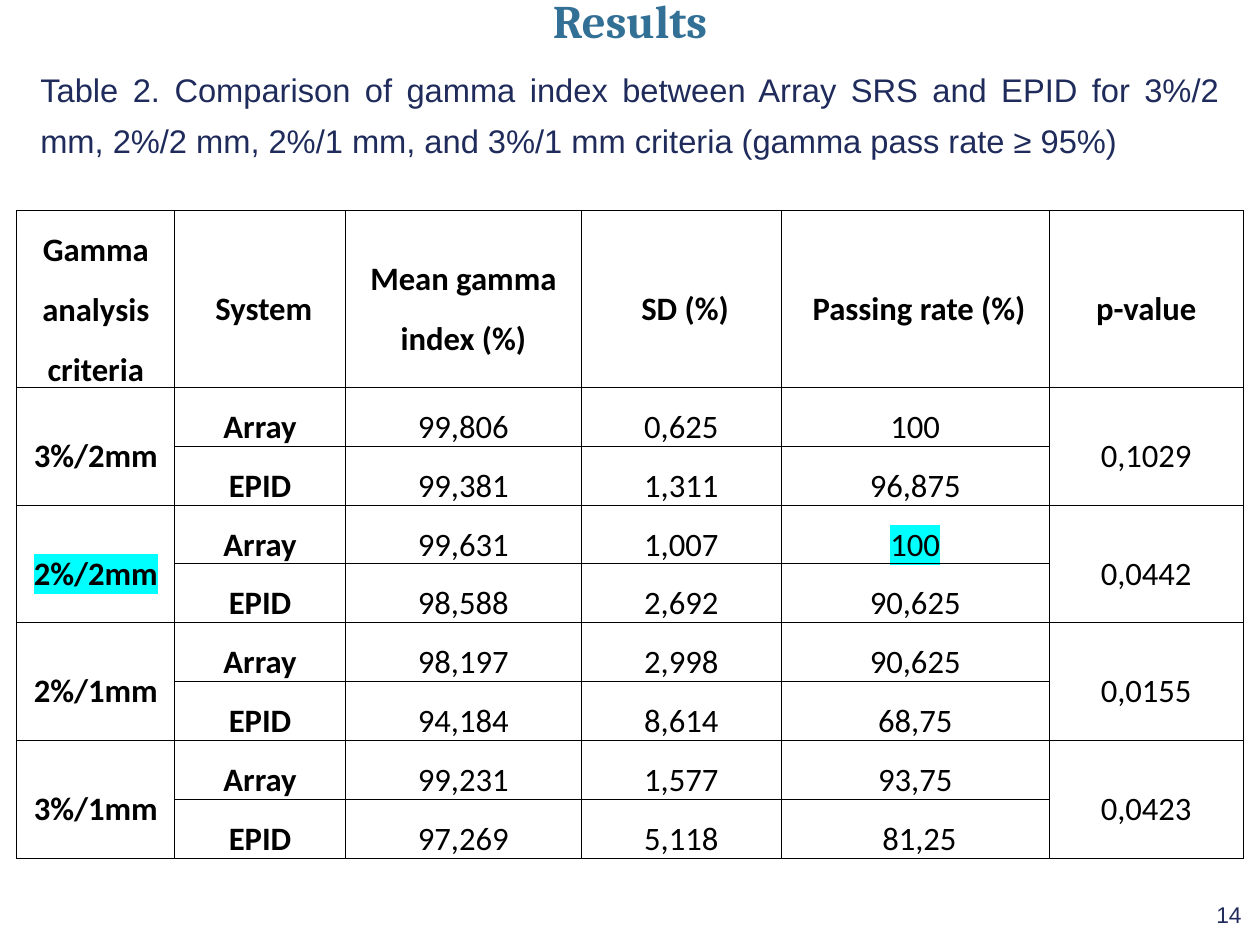
from lxml import etree
from pptx import Presentation, util as u
from pptx.dml.color import RGBColor
from pptx.enum import text as t
from pptx.oxml.ns import qn

Pt = u.Pt
NAVY, BLUE, BLACK, CYAN = "1F2B5B", "337096", "000000", "00FFFF"
CENTER, JUSTIFY = t.PP_ALIGN.CENTER, t.PP_ALIGN.JUSTIFY

HEAD = ["Gamma analysis criteria", "System", "Mean gamma index (%)",
        "SD (%)", "Passing rate (%)", "p-value"]
# criteria, p-value, then mean, SD and passing rate for each system
DATA = [
    ("3%/2mm", "0,1029", ("99,806", "0,625", "100"), ("99,381", "1,311", "96,875")),
    ("2%/2mm", "0,0442", ("99,631", "1,007", "100"), ("98,588", "2,692", "90,625")),
    ("2%/1mm", "0,0155", ("98,197", "2,998", "90,625"), ("94,184", "8,614", "68,75")),
    ("3%/1mm", "0,0423", ("99,231", "1,577", "93,75"), ("97,269", "5,118", "81,25")),
]
SYSTEMS = ["Array", "EPID"]
WIDTHS = [135.4, 146.2, 202.3, 171.4, 229.7, 166.3]
INDENTS = {(0, 1): 6.5, (0, 3): 6.5, (0, 4): 6.5, (8, 4): 7.2}
MARKED = {(3, 0), (3, 4)}


def color(hex):
    return RGBColor.from_string(hex)


def write(frame, words, size=28, font="Calibri", ink=BLACK, bold=False,
          align=CENTER, space=1.5, indent=0, mark=None):
    para = frame.paragraphs[0]
    para.alignment, para.line_spacing = align, space
    if indent:
        para._p.get_or_add_pPr().set("indent", str(Pt(indent)))
    run = para.add_run()
    run.text = words
    face = run.font
    face.size, face.name, face.bold = Pt(size), font, bold
    face.color.rgb = color(ink)
    if mark:
        light = etree.Element(qn("a:highlight"))
        etree.SubElement(light, qn("a:srgbClr"), val=mark)
        run._r.rPr.find(qn("a:solidFill")).addnext(light)


def label(slide, box, words, **format):
    frame = slide.shapes.add_textbox(*map(Pt, box)).text_frame
    frame.margin_left = frame.margin_right = 0
    frame.margin_top = frame.margin_bottom = 0
    frame.word_wrap = True
    frame.auto_size = t.MSO_AUTO_SIZE.SHAPE_TO_FIT_TEXT
    write(frame, words, **format)


def dress(cell):
    """Black rules on all sides, no fill, narrow side margins."""
    props = cell._tc.get_or_add_tcPr()
    for side in "LRTB":
        line = etree.SubElement(props, qn("a:ln" + side), w=str(Pt(1)))
        fill = etree.SubElement(line, qn("a:solidFill"))
        etree.SubElement(fill, qn("a:srgbClr"), val=BLACK)
    cell.fill.background()
    cell.vertical_anchor = t.MSO_ANCHOR.MIDDLE
    cell.margin_left = cell.margin_right = Pt(4.5)
    cell.margin_top = cell.margin_bottom = 0


def results(slide, box):
    rows = [HEAD]
    for rule, value, *scores in DATA:
        for i, (system, score) in enumerate(zip(SYSTEMS, scores)):
            rows.append([None if i else rule, system, *score,
                         None if i else value])

    shape = slide.shapes.add_table(len(rows), len(HEAD), *map(Pt, box))
    table = shape.table
    table.first_row = table.horz_banding = False
    for column, width in zip(table.columns, WIDTHS):
        column.width = Pt(width)
    for r, row in enumerate(table.rows):
        row.height = Pt(94.3 if r == 0 else 28.8 if r % 2 else 31)
    shape.height = Pt(box[3])

    for r, row in enumerate(rows):
        for c, words in enumerate(row):
            cell = table.cell(r, c)
            dress(cell)
            if words is not None:
                write(cell.text_frame, words, bold=r == 0 or c < 2,
                      indent=INDENTS.get((r, c), 0),
                      mark=CYAN if (r, c) in MARKED else None)
    # Criteria and p-value span both systems
    for r in range(1, len(rows), 2):
        for c in (0, len(HEAD) - 1):
            table.cell(r, c).merge(table.cell(r + 1, c))


def main():
    deck = Presentation()
    deck.slide_width, deck.slide_height = Pt(1080), Pt(810)
    slide = deck.slides.add_slide(deck.slide_layouts[6])

    # Caption
    label(slide, (34.6, 49.7, 1010.2, 83.5),
          "Table 2. Comparison of gamma index between Array SRS and EPID for "
          "3%/2 mm, 2%/2 mm, 2%/1 mm, and 3%/1 mm criteria "
          "(gamma pass rate ≥ 95%)",
          font="Arial", ink=NAVY, align=JUSTIFY, space=1.3)
    # Table
    results(slide, (14.4, 180.7, 1050.5, 499.7))
    # Page number
    label(slide, (1042.6, 771.1, 45.4, 22.3), "14", size=19.5, font="Arial",
          ink=NAVY, align=JUSTIFY, space=Pt(24.5))
    # Title
    label(slide, (22.3, 9.4, 1035.4, 33.8), "Results", size=40,
          font="Cambria", ink=BLUE, bold=True, space=Pt(32))

    deck.save("out.pptx")


if __name__ == "__main__":
    main()
